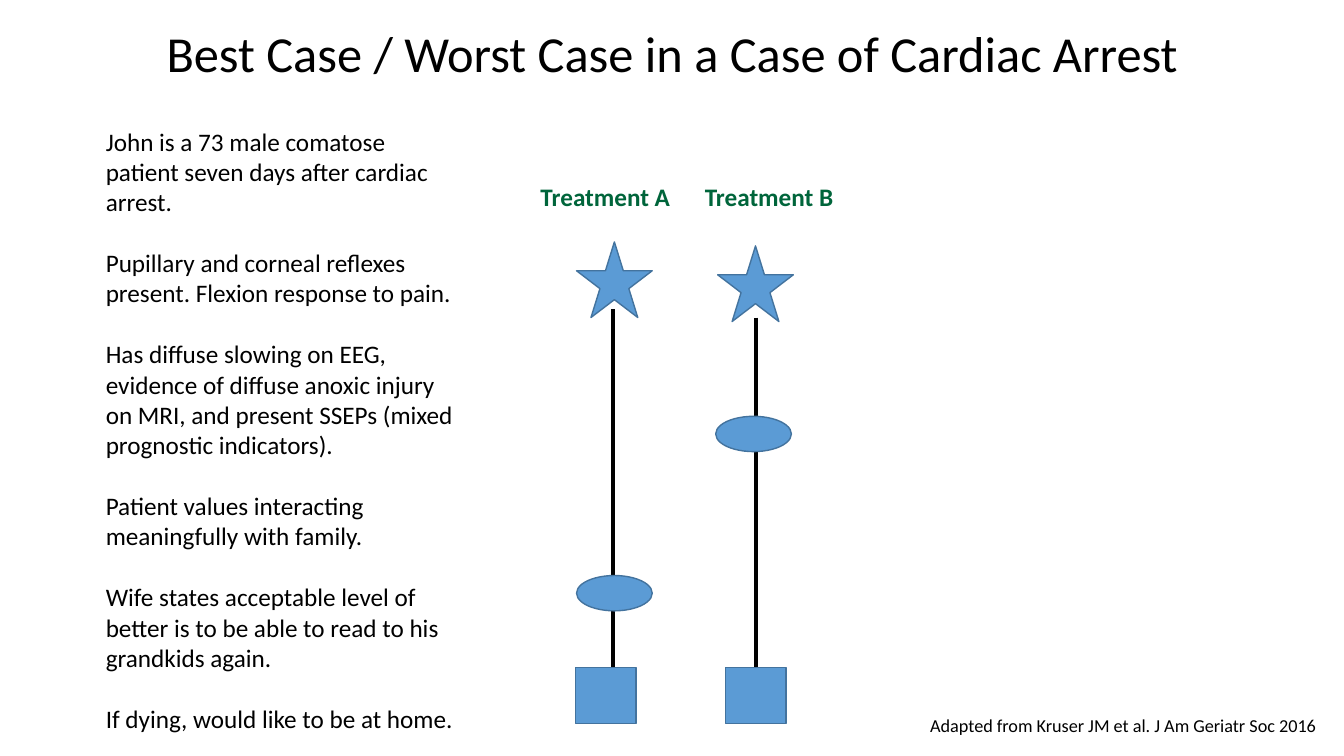
from lxml import etree
from pptx import Presentation
from pptx.dml.color import RGBColor
from pptx.enum.shapes import MSO_CONNECTOR, MSO_SHAPE
from pptx.enum.text import MSO_ANCHOR, MSO_AUTO_SIZE, PP_ALIGN
from pptx.oxml.ns import qn
from pptx.util import Inches, Pt

LEFT, CENTER, RIGHT = PP_ALIGN.LEFT, PP_ALIGN.CENTER, PP_ALIGN.RIGHT
TOP, MIDDLE = MSO_ANCHOR.TOP, MSO_ANCHOR.MIDDLE
NO_FIT = MSO_AUTO_SIZE.NONE
STAR, OVAL, SQUARE = MSO_SHAPE.STAR_5_POINT, MSO_SHAPE.OVAL, MSO_SHAPE.RECTANGLE
STRAIGHT = MSO_CONNECTOR.STRAIGHT

BLACK = RGBColor(0x00, 0x00, 0x00)
GREEN = RGBColor(0x00, 0x65, 0x3B)
BLUE = RGBColor(0x5B, 0x9B, 0xD5)
EDGE = RGBColor(0x43, 0x73, 0x9E)

# The grid has 100 columns and 100 rows
WIDTH, HEIGHT = Inches(13.333), Inches(7.5)
STAR_SIZE = (5.63, 10)
OVAL_SIZE = (5.63, 4.67)
BOX_SIZE = (4.5, 7.47)
BOX_TOP = 88.27

TITLE = "Best Case / Worst Case in a Case of Cardiac Arrest"
SOURCE = "Adapted from Kruser JM et al. J Am Geriatr Soc 2016"
STORY = [
    "John is a 73 male comatose patient seven days after cardiac arrest.",
    "Pupillary and corneal reflexes present. Flexion response to pain.",
    "Has diffuse slowing on EEG, evidence of diffuse anoxic injury on MRI, "
    "and present SSEPs (mixed prognostic indicators).",
    "Patient values interacting meaningfully with family.",
    "Wife states acceptable level of better is to be able to read to his "
    "grandkids again.",
    "If dying, would like to be at home.",
]

# Places are (column, row); the line is (column, first row)
ARMS = [
    {"name": "Treatment A", "label": (38.93, 12.22), "star": (42.9, 32),
     "oval": (42.9, 76.13), "box": 42.83, "line": (45.6, 40.93), "join": False},
    {"name": "Treatment B", "label": (51.15, 12.15), "star": (53.4, 32.53),
     "oval": (53.25, 55.07), "box": 54, "line": (56.25, 42), "join": True},
]


def col(n):
    return round(WIDTH * n / 100)


def row(n):
    return round(HEIGHT * n / 100)


def apply(item, values):
    for key, value in values.items():
        setattr(item, key, value)


def write(frame, lines, size, color=BLACK, bold=False, align=LEFT,
          anchor=TOP, gap=0, spacing=1.0):
    apply(frame, {"word_wrap": True, "auto_size": NO_FIT,
                  "vertical_anchor": anchor})
    for i, line in enumerate(lines):
        para = frame.add_paragraph() if i else frame.paragraphs[0]
        apply(para, {"alignment": align, "line_spacing": spacing,
                     "space_before": Pt(gap if i else 0)})
        run = para.add_run()
        run.text = line
        apply(run.font, {"name": "Calibri", "size": Pt(size), "bold": bold})
        run.font.color.rgb = color


def add_text(slide, place, lines, size, **style):
    x, y, w, h = place
    box = slide.shapes.add_textbox(col(x), row(y), col(w), row(h))
    write(box.text_frame, lines, size, **style)


def add_mark(slide, kind, place, size):
    (x, y), (w, h) = place, size
    mark = slide.shapes.add_shape(kind, col(x), row(y), col(w), row(h))
    mark.shadow.inherit = False
    mark.fill.solid()
    mark.fill.fore_color.rgb = BLUE
    mark.line.color.rgb = EDGE
    mark.line.width = Pt(1)
    return mark


def add_line(slide, x, top, end):
    line = slide.shapes.add_connector(STRAIGHT, col(x), row(top), col(x), row(end))
    line.line.color.rgb = BLACK
    line.line.width = Pt(2.5)
    etree.SubElement(line._element.spPr, qn("a:effectLst"))
    return line


def add_title(slide):
    title = slide.shapes.title
    apply(title, {"left": col(1.43), "top": row(3.07),
                  "width": col(97.2), "height": row(8.67)})
    write(title.text_frame, [TITLE], 36, align=CENTER, anchor=MIDDLE, spacing=0.9)


def add_arm(slide, arm):
    # Worst case at the foot, best case on top, likely case between
    box = add_mark(slide, SQUARE, (arm["box"], BOX_TOP), BOX_SIZE)
    line = add_line(slide, *arm["line"], BOX_TOP)
    if arm["join"]:
        line.end_connect(box, 0)
    add_mark(slide, STAR, arm["star"], STAR_SIZE)
    add_mark(slide, OVAL, arm["oval"], OVAL_SIZE)
    x, w = arm["label"]
    add_text(slide, (x, 23.33, w, 5.33), [arm["name"]], 18,
             color=GREEN, bold=True, align=CENTER)


def main():
    deck = Presentation()
    apply(deck, {"slide_width": WIDTH, "slide_height": HEIGHT})
    slide = deck.slides.add_slide(deck.slide_layouts[5])
    add_title(slide)

    # Patient story
    add_text(slide, (7.13, 16, 27.83, 82.13), STORY, 18, gap=22)

    # Treatment diagrams
    for arm in ARMS:
        add_arm(slide, arm)

    # Source line
    add_text(slide, (66.83, 93.87, 31.8, 4.27), [SOURCE], 13, align=RIGHT)
    deck.save("out.pptx")


if __name__ == "__main__":
    main()
